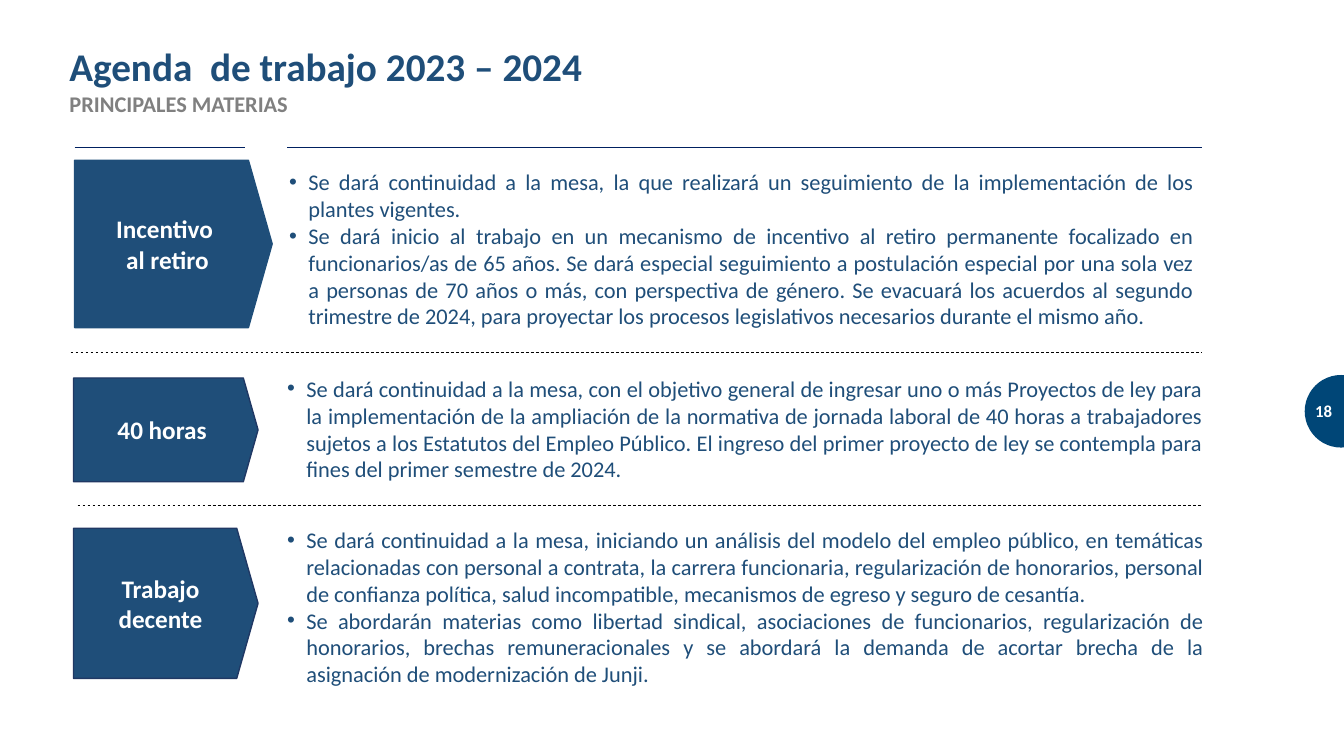
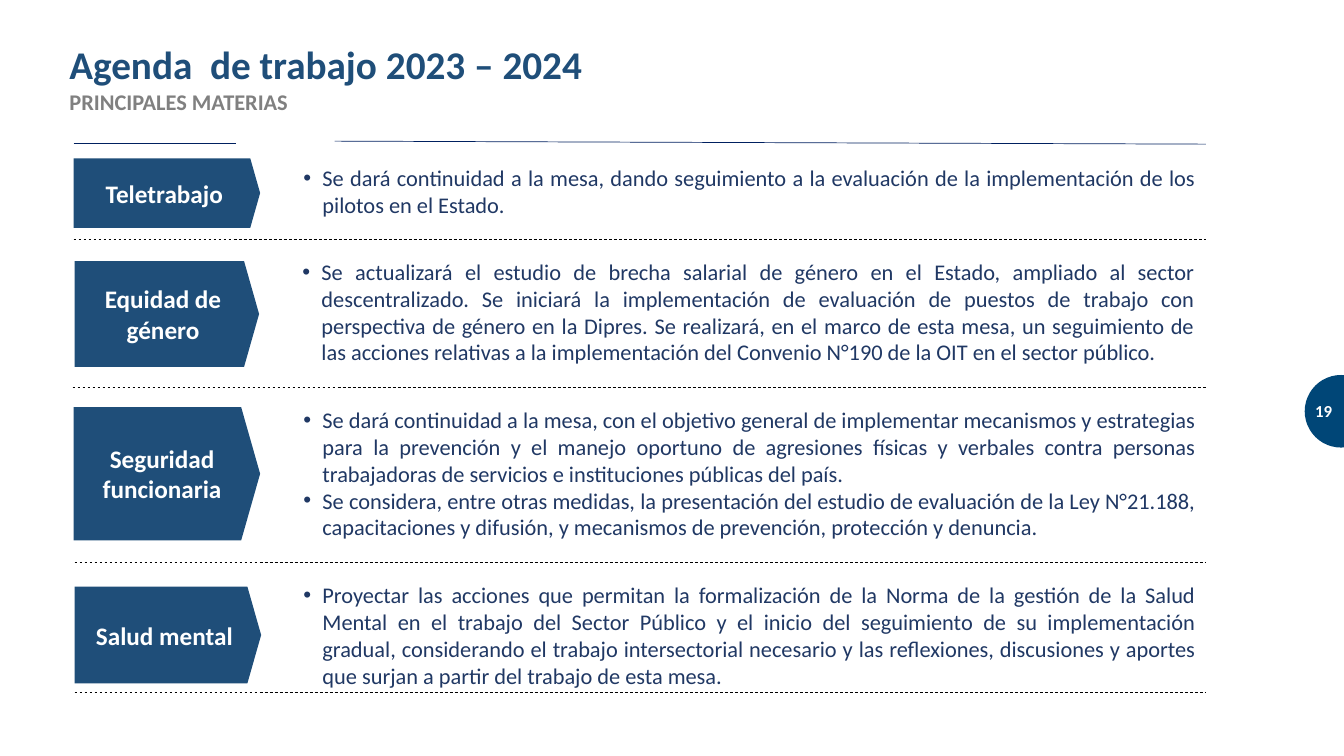
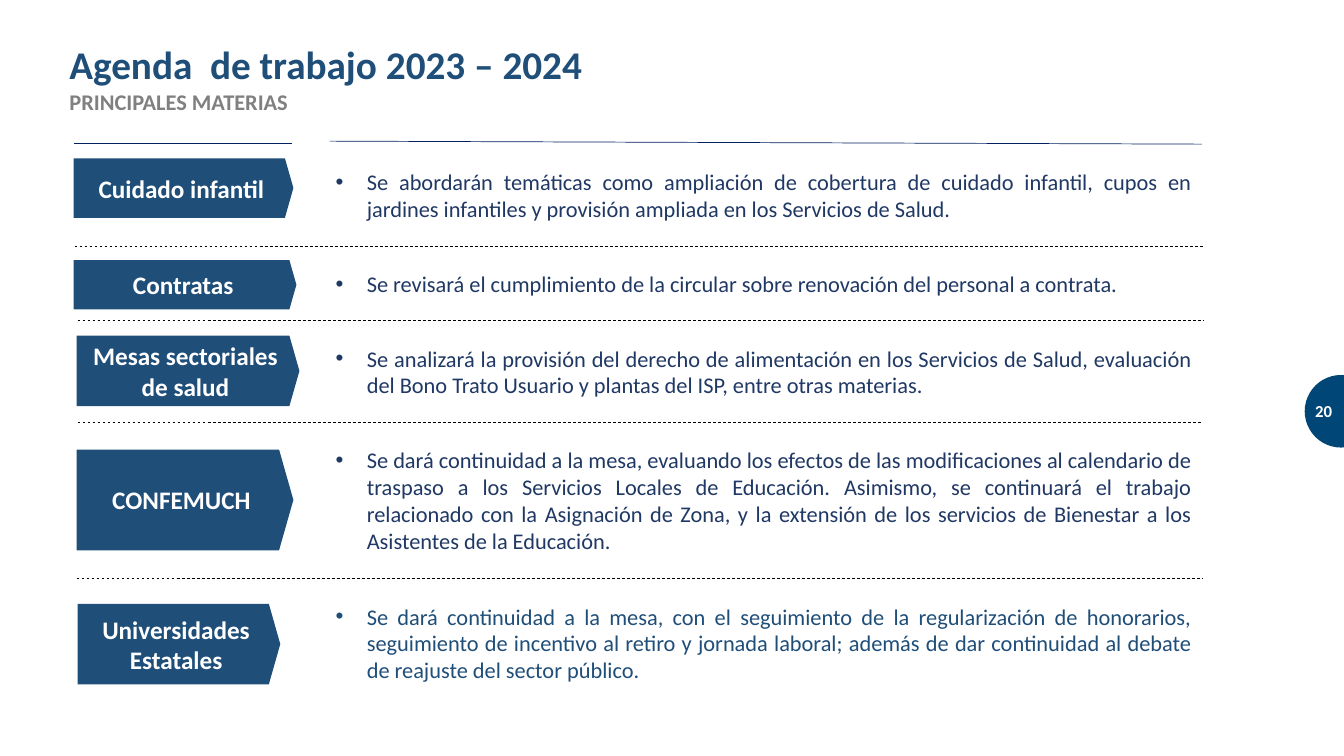
from lxml import etree
from pptx import Presentation
from pptx import util as u
from pptx.dml.color import RGBColor
from pptx.enum import dml, shapes, text
from pptx.oxml.ns import qn

FONT = "Calibri"
COLORS = {"blue": "1F4E79", "navy": "203864", "rule": "002060", "grey": "808080",
          "badge": "004677", "white": "FFFFFF", "black": "000000"}
TITLE = "Agenda  de trabajo 2023 – 2024"
SUBTITLE = "PRINCIPALES MATERIAS"
LINE_HEIGHT = 0.27
INSETS = 0.1

# Rules and dividers: x1, y1, x2, y2.
# Rows: label lines, arrow box, arrow outline, (left, top, width, lines) of the text,
# text colour, bullets.
SLIDES = [
    {"number": 18, "title_top": 0.47, "indent": 0.19,
     "rules": [(0.74, 1.46, 2.43, 1.46), (2.85, 1.46, 11.92, 1.46)],
     "dividers": [(0.7, 3.5, 11.92, 3.5), (0.77, 5.01, 11.92, 5.01)],
     "rows": [
         (["Incentivo ", "al retiro"], (0.74, 1.59, 1.96, 1.66), "blue",
          (2.77, 1.62, 9.17, 6), "blue",
          ["Se dará continuidad a la mesa, la que realizará un seguimiento de la "
           "implementación de los plantes vigentes.",
           "Se dará inicio al trabajo en un mecanismo de incentivo al retiro permanente "
           "focalizado en funcionarios/as de 65 años. Se dará especial seguimiento a "
           "postulación especial por una sola vez a personas de 70 años o más, con "
           "perspectiva de género. Se evacuará los acuerdos al segundo trimestre de 2024, "
           "para proyectar los procesos legislativos necesarios durante el mismo año."]),
         (["40 horas"], (0.73, 3.75, 1.83, 1.03), "navy",
          (2.75, 3.67, 9.28, 4), "blue",
          ["Se dará continuidad a la mesa, con el objetivo general de ingresar uno o más "
           "Proyectos de ley para la implementación de la ampliación de la normativa de "
           "jornada laboral de 40 horas a trabajadores sujetos a los Estatutos del Empleo "
           "Público. El ingreso del primer proyecto de ley se contempla para fines del "
           "primer semestre de 2024."]),
         (["Trabajo decente"], (0.73, 5.24, 1.83, 1.49), "navy",
          (2.75, 5.17, 9.29, 6), "blue",
          ["Se dará continuidad a la mesa, iniciando un análisis del modelo del empleo "
           "público, en temáticas relacionadas con personal a contrata, la carrera "
           "funcionaria, regularización de honorarios, personal de confianza política, "
           "salud incompatible, mecanismos de egreso y seguro de cesantía.",
           "Se abordarán materias como libertad sindical, asociaciones de funcionarios, "
           "regularización de honorarios, brechas remuneracionales y se abordará la demanda "
           "de acortar brecha de la asignación de modernización de Junji."]),
     ]},
    {"number": 19, "title_top": 0.45, "indent": 0.19,
     "rules": [(0.73, 1.42, 2.34, 1.42), (3.32, 1.4, 11.96, 1.43)],
     "dividers": [(0.73, 2.37, 11.96, 2.37), (0.72, 3.84, 11.96, 3.84),
                  (0.74, 5.58, 11.96, 5.58), (0.74, 6.87, 11.96, 6.87)],
     "rows": [
         (["Teletrabajo"], (0.73, 1.57, 1.85, 0.69), None,
          (2.91, 1.58, 9.05, 2), "navy",
          ["Se dará continuidad a la mesa, dando seguimiento a la evaluación de la "
           "implementación de los pilotos en el Estado."]),
         (["Equidad de género"], (0.74, 2.59, 1.83, 1.05), None,
          (2.9, 2.51, 9.05, 4), "navy",
          ["Se actualizará el estudio de brecha salarial de género en el Estado, ampliado "
           "al sector descentralizado. Se iniciará la implementación de evaluación de "
           "puestos de trabajo con perspectiva de género en la Dipres. Se realizará, en el "
           "marco de esta mesa, un seguimiento de las acciones relativas a la "
           "implementación del Convenio N°190 de la OIT en el sector público."]),
         (["Seguridad funcionaria"], (0.73, 4.04, 1.85, 1.32), None,
          (2.91, 3.98, 9.05, 5), "navy",
          ["Se dará continuidad a la mesa, con el objetivo general de implementar "
           "mecanismos y estrategias para la prevención y el manejo oportuno de agresiones "
           "físicas y verbales contra personas trabajadoras de servicios e instituciones "
           "públicas del país.",
           "Se considera, entre otras medidas, la presentación del estudio de evaluación de "
           "la Ley N°21.188, capacitaciones y difusión, y mecanismos de prevención, "
           "protección y denuncia."]),
         (["Salud mental"], (0.74, 5.82, 1.85, 0.96), None,
          (2.91, 5.72, 9.05, 4), "navy",
          ["Proyectar las acciones que permitan la formalización de la Norma de la gestión "
           "de la Salud Mental en el trabajo del Sector Público y el inicio del seguimiento "
           "de su implementación gradual, considerando el trabajo intersectorial necesario "
           "y las reflexiones, discusiones y aportes que surjan a partir del trabajo de "
           "esta mesa."]),
     ]},
    {"number": 20, "title_top": 0.45, "indent": 0.31,
     "rules": [(0.73, 1.42, 2.9, 1.42), (3.27, 1.4, 11.92, 1.43)],
     "dividers": [(0.74, 2.44, 11.93, 2.44), (0.77, 3.18, 11.94, 3.18),
                  (0.77, 4.19, 11.93, 4.19), (0.76, 5.74, 11.93, 5.74)],
     "rows": [
         (["Cuidado infantil"], (0.73, 1.57, 2.18, 0.59), None,
          (3.23, 1.62, 8.69, 2), "navy",
          ["Se abordarán temáticas como ampliación de cobertura de cuidado infantil, cupos "
           "en jardines infantiles y provisión ampliada en los Servicios de Salud."]),
         (["Contratas"], (0.73, 2.58, 2.21, 0.49), None,
          (3.23, 2.63, 8.69, 1), "navy",
          ["Se revisará el cumplimiento de la circular sobre renovación del personal a "
           "contrata."]),
         (["Mesas sectoriales de salud"], (0.76, 3.33, 2.21, 0.7), None,
          (3.23, 3.37, 8.69, 2), "navy",
          ["Se analizará la provisión del derecho de alimentación en los Servicios de "
           "Salud, evaluación del Bono Trato Usuario y plantas del ISP, entre otras "
           "materias."]),
         (["CONFEMUCH"], (0.76, 4.46, 2.15, 1), None,
          (3.23, 4.38, 8.69, 4), "navy",
          ["Se dará continuidad a la mesa, evaluando los efectos de las modificaciones al "
           "calendario de traspaso a los Servicios Locales de Educación. Asimismo, se "
           "continuará el trabajo relacionado con la Asignación de Zona, y la extensión de "
           "los servicios de Bienestar a los Asistentes de la Educación."]),
         (["Universidades Estatales"], (0.77, 5.99, 2.01, 0.8), None,
          (3.23, 5.93, 8.69, 3), "blue",
          ["Se dará continuidad a la mesa, con el seguimiento de la regularización de "
           "honorarios, seguimiento de incentivo al retiro y jornada laboral; además de dar "
           "continuidad al debate de reajuste del sector público."]),
     ]},
]


def rgb(name):
    return RGBColor.from_string(COLORS[name])


def inches(values):
    return [u.Inches(v) for v in values]


def add_paragraph(tf, first, content, size, color, bold=False, align=text.PP_ALIGN.LEFT):
    p = tf.paragraphs[0] if first else tf.add_paragraph()
    p.alignment = align
    r = p.add_run()
    r.text = content
    r.font.name, r.font.size, r.font.bold = FONT, u.Pt(size), bold
    r.font.color.rgb = rgb(color)
    return p


def set_indent(p, left, hanging=0):
    pPr = p._p.get_or_add_pPr()
    pPr.set("marL", str(u.Inches(left)))
    pPr.set("indent", str(-u.Inches(hanging)))
    return pPr


def add_text_box(s, box, anchor=text.MSO_ANCHOR.MIDDLE):
    tf = s.shapes.add_textbox(*inches(box)).text_frame
    tf.word_wrap = True
    tf.vertical_anchor = anchor
    return tf


def add_line(s, ends, color, dashed=False):
    line = s.shapes.add_connector(shapes.MSO_CONNECTOR.STRAIGHT, *inches(ends))
    line.line.color.rgb = rgb(color)
    line.line.width = u.Pt(0.5)
    if dashed:
        line.line.dash_style = dml.MSO_LINE.DASH
    etree.SubElement(line._element.spPr, qn("a:effectLst"))


def add_filled(s, preset, box, fill, outline=None):
    sp = s.shapes.add_shape(preset, *inches(box))
    sp.shadow.inherit = False
    sp.fill.solid()
    sp.fill.fore_color.rgb = rgb(fill)
    if outline:
        sp.line.color.rgb = rgb(outline)
        sp.line.width = u.Pt(1)
    else:
        sp.line.fill.background()
    return sp


def add_title(s, top):
    tf = add_text_box(s, (0, top, 10.32, 0.64))
    for i, part in enumerate([(TITLE, 28, "blue"), (SUBTITLE, 16, "grey")]):
        set_indent(add_paragraph(tf, i == 0, *part, bold=True), 0.59)


def add_page_number(s, number):
    add_filled(s, shapes.MSO_SHAPE.OVAL, (12.94, 3.72, 0.72, 0.72), "badge")
    tf = add_text_box(s, (12.86, 3.88, 0.45, 0.4))
    add_paragraph(tf, True, str(number), 12, "white", True, text.PP_ALIGN.RIGHT)


def add_label(s, lines, box, outline):
    sp = add_filled(s, shapes.MSO_SHAPE.PENTAGON, box, "blue", outline)
    sp.adjustments[0] = 0.142
    tf = sp.text_frame
    tf.word_wrap = True
    tf.vertical_anchor = text.MSO_ANCHOR.MIDDLE
    for i, line in enumerate(lines):
        add_paragraph(tf, i == 0, line, 18, "white", True, text.PP_ALIGN.CENTER)


def add_bullets(s, place, color, bullets, indent):
    left, top, width, lines = place
    tf = add_text_box(s, (left, top, width, INSETS + lines * LINE_HEIGHT),
                      text.MSO_ANCHOR.TOP)
    tf.auto_size = text.MSO_AUTO_SIZE.SHAPE_TO_FIT_TEXT
    for i, bullet in enumerate(bullets):
        p = add_paragraph(tf, i == 0, bullet, 16, color, align=text.PP_ALIGN.JUSTIFY)
        pPr = set_indent(p, indent, indent)
        etree.SubElement(pPr, qn("a:buFont"), typeface="Arial")
        etree.SubElement(pPr, qn("a:buChar"), char="•")


def add_agenda_slide(prs, data):
    s = prs.slides.add_slide(prs.slide_layouts[6])
    add_title(s, data["title_top"])
    for ends in data["rules"]:
        add_line(s, ends, "rule")
    for ends in data["dividers"]:
        add_line(s, ends, "black", dashed=True)
    for label, arrow, outline, place, color, bullets in data["rows"]:
        add_label(s, label, arrow, outline)
        add_bullets(s, place, color, bullets, data["indent"])
    add_page_number(s, data["number"])


def main():
    prs = Presentation()
    prs.slide_width, prs.slide_height = inches((13.33, 7.5))
    for data in SLIDES:
        add_agenda_slide(prs, data)
    prs.save("out.pptx")


if __name__ == "__main__":
    main()
